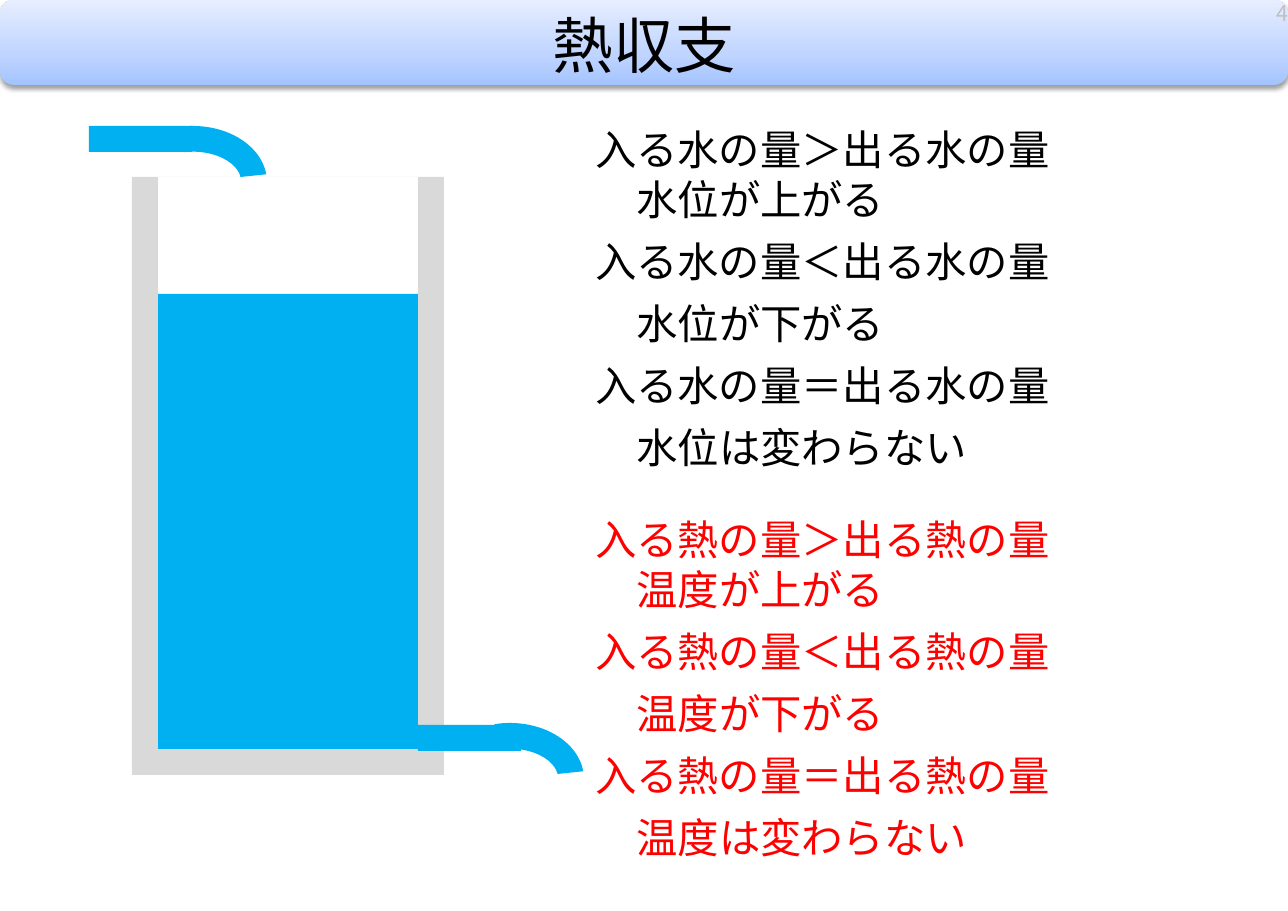
from lxml.etree import SubElement
from pptx import Presentation
from pptx.dml.color import RGBColor
from pptx.enum.shapes import MSO_SHAPE as Shape
from pptx.enum.text import MSO_ANCHOR as Anchor, PP_ALIGN as Align
from pptx.oxml import parse_xml
from pptx.oxml.ns import nsdecls, qn
from pptx.util import Pt

PX = 8298  # EMU in one px
FONT = "Noto Sans CJK JP"
COLORS = {
    "water": "00B0F0", "tank": "D9D9D9", "white": "FFFFFF",
    "black": "000000", "red": "FF0000", "number": "BFBFBF",
    "banner_bottom": "A4C4FF", "banner_middle": "BFD4FF", "banner_top": "E6EEFF",
}
WATER_LINES = [
    ("入る水の量＞出る水の量", "水位が上がる"),
    ("入る水の量＜出る水の量", "水位が下がる"),
    ("入る水の量＝出る水の量", "水位は変わらない"),
]
HEAT_LINES = [
    ("入る熱の量＞出る熱の量", "温度が上がる"),
    ("入る熱の量＜出る熱の量", "温度が下がる"),
    ("入る熱の量＝出る熱の量", "温度は変わらない"),
]
PIPE = 26
WALL = 26


def color(name):
    return RGBColor.from_string(COLORS[name])


def place(shape, left, top, width, height):
    shape.left, shape.top = left * PX, top * PX
    shape.width, shape.height = width * PX, height * PX


def style(paragraph, size, color_name):
    """Set size, colour and both the Latin and East Asian fonts."""
    font = paragraph.font
    font.size = Pt(size)
    font.color.rgb = color(color_name)
    font.name = FONT
    latin = paragraph._p.find(".//" + qn("a:latin"))
    latin.addnext(parse_xml(f'<a:ea {nsdecls("a")} typeface="{FONT}"/>'))


def add_shape(slide, kind, left, top, width, height, fill):
    shape = slide.shapes.add_shape(
        kind, left * PX, top * PX, width * PX, height * PX)
    shape.shadow.inherit = False
    shape.fill.solid()
    shape.fill.fore_color.rgb = color(fill)
    shape.line.fill.background()
    return shape


def add_pipe(slide, left, top, bend_left, bend_top):
    add_shape(slide, Shape.RECTANGLE, left, top, 103, PIPE, "water")
    bend = add_shape(slide, Shape.BLOCK_ARC, bend_left, bend_top, 148, 112, "water")
    for index, value in enumerate((152.44, 212.42, 0.23)):
        bend.adjustments[index] = value


def add_tank(slide):
    left, top, width, height = 132, 177, 312, 598
    inner_left, inner_width = left + WALL, width - 2 * WALL
    bottom = top + height - WALL
    level = 294
    add_shape(slide, Shape.RECTANGLE, left, top, width, height, "tank")
    add_shape(slide, Shape.RECTANGLE, inner_left, top, inner_width, bottom - top, "white")
    add_shape(slide, Shape.RECTANGLE, inner_left, level, inner_width, bottom - level, "water")


def add_banner(slide):
    """Add the gradient bar with its soft shadow, behind the title."""
    banner = add_shape(slide, Shape.ROUNDED_RECTANGLE, 0, 0, 1288, 85, "banner_middle")
    stops = "".join(
        f'<a:gs pos="{position}"><a:srgbClr val="{COLORS[name]}"/></a:gs>'
        for position, name in ((0, "banner_bottom"), (35000, "banner_middle"),
                               (100000, "banner_top")))
    properties = banner._element.spPr
    properties.replace(properties.find(qn("a:solidFill")), parse_xml(
        f'<a:gradFill {nsdecls("a")} rotWithShape="1"><a:gsLst>{stops}</a:gsLst>'
        '<a:lin ang="16200000" scaled="0"/></a:gradFill>'))
    effects = properties.find(qn("a:effectLst"))
    effects.append(parse_xml(
        f'<a:outerShdw {nsdecls("a")} blurRad="{Pt(3.1)}" dist="{Pt(1.6)}" dir="5400000" '
        f'rotWithShape="0"><a:srgbClr val="{COLORS["black"]}"><a:alpha val="38000"/>'
        '</a:srgbClr></a:outerShdw>'))
    slide.shapes.title._element.addprevious(banner._element)


def set_line(shape, text, size, color_name, align):
    """Put one line, centred in height and without insets, in the shape."""
    frame = shape.text_frame
    frame.text = text
    frame.vertical_anchor = Anchor.MIDDLE
    frame.margin_left = frame.margin_right = frame.margin_top = frame.margin_bottom = 0
    paragraph = frame.paragraphs[0]
    paragraph.alignment = align
    style(paragraph, size, color_name)


def fill_list(body, top, pairs, color_name):
    place(body, 584, top, 677, 371)
    frame = body.text_frame
    lines = [line for pair in pairs for line in pair]
    frame.text = "\n".join(lines)
    for index, paragraph in enumerate(frame.paragraphs):
        properties = paragraph._p.get_or_add_pPr()
        properties.set("marL", str(Pt(27) if index % 2 else 0))
        properties.set("indent", "0")
        SubElement(properties, qn("a:buNone"))
        paragraph.line_spacing = Pt(32.4)
        paragraph.space_before = Pt(8.1 if index > 1 else 0)
        style(paragraph, 27, color_name)


def main():
    presentation = Presentation()
    presentation.slide_width, presentation.slide_height = 1288 * PX, 911 * PX
    slide = presentation.slides.add_slide(
        presentation.slide_layouts.get_by_name("Two Content"))
    title, water_body, heat_body = slide.placeholders

    place(title, 0, 1, 1288, 87)
    set_line(title, "熱収支", 40, "black", Align.CENTER)
    add_banner(slide)
    number = slide.shapes.add_textbox(1251 * PX, 0, 37 * PX, 26 * PX)
    set_line(number, "4", 14, "number", Align.RIGHT)

    add_tank(slide)
    add_pipe(slide, 418, 725, 436, 723)
    add_pipe(slide, 89, 126, 119, 126)
    fill_list(water_body, 119, WATER_LINES, "black")
    fill_list(heat_body, 509, HEAT_LINES, "red")
    presentation.save("out.pptx")


if __name__ == "__main__":
    main()
